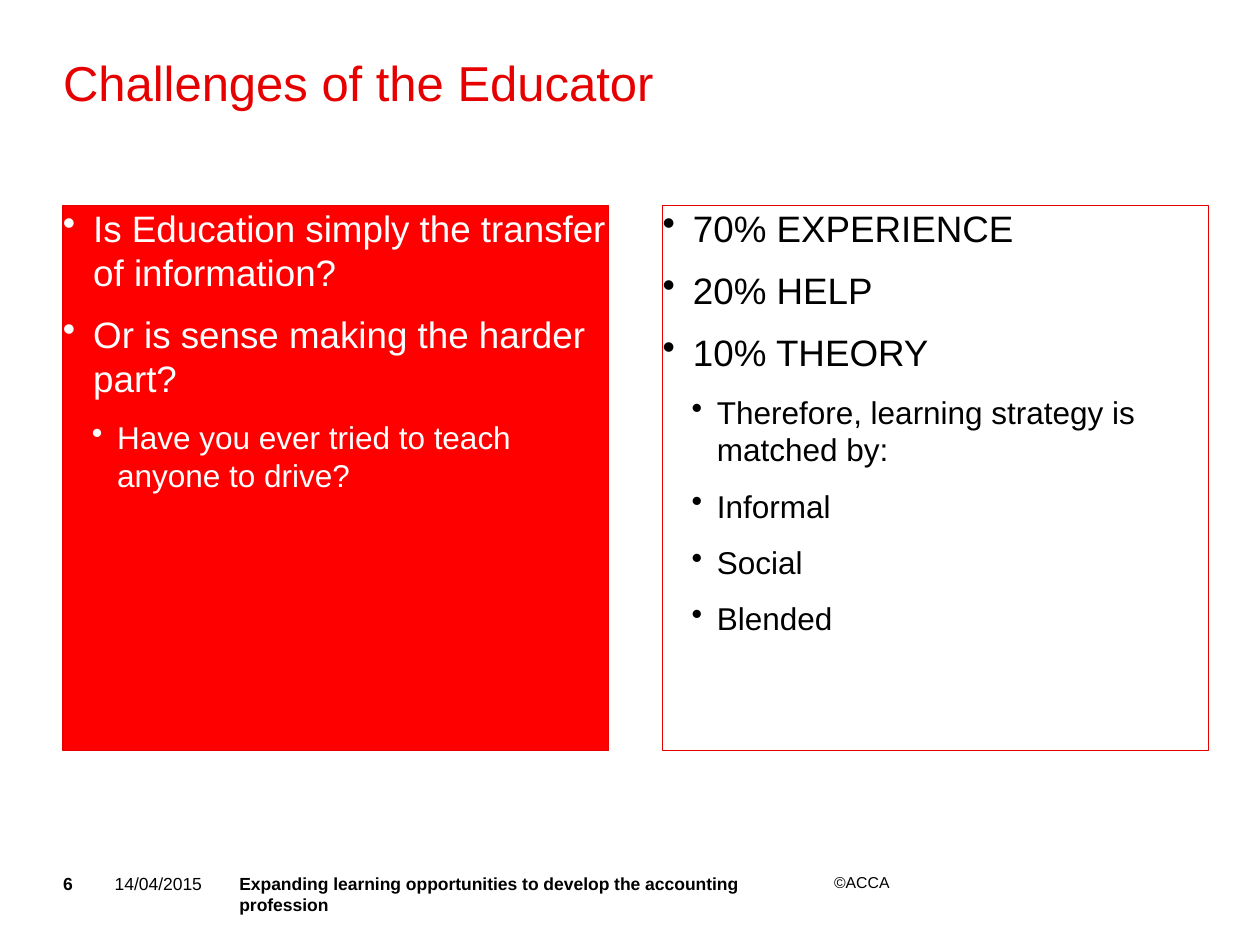
from dataclasses import dataclass

from lxml import etree
from pptx import Presentation
from pptx import util as u
from pptx.dml.color import RGBColor
from pptx.enum import shapes, text
from pptx.oxml.ns import qn


@dataclass(frozen=True)
class Theme:
    font: str = "Arial"
    red: RGBColor = RGBColor(0xE6, 0x00, 0x00)
    panel_red: RGBColor = RGBColor(0xFF, 0x00, 0x00)
    black: RGBColor = RGBColor(0x00, 0x00, 0x00)
    white: RGBColor = RGBColor(0xFF, 0xFF, 0xFF)
    title_size: float = 28
    level_sizes: tuple = (21, 18)
    level_indents: tuple = ((0.24, 0.24), (0.43, 0.20))
    bullet_gap: float = 10.5
    footer_size: float = 10
    copyright_size: float = 9


class SlideBuilder:
    def __init__(self, page, theme):
        self.page = page
        self.theme = theme

    def style(self, para, size, color, bold=False):
        para.alignment = text.PP_ALIGN.LEFT
        para.font.name = self.theme.font
        para.font.size = u.Pt(size)
        para.font.color.rgb = color
        para.font.bold = bold

    def prepare(self, frame):
        frame.word_wrap = True
        frame.vertical_anchor = text.MSO_ANCHOR.TOP
        frame.margin_left = frame.margin_right = 0
        frame.margin_top = frame.margin_bottom = 0

    def label(self, words, place, size, color, bold=False, line_spacing=None):
        box = self.page.shapes.add_textbox(*map(u.Inches, place))
        self.prepare(box.text_frame)
        para = box.text_frame.paragraphs[0]
        para.text = words
        para.line_spacing = line_spacing
        self.style(para, size, color, bold)

    def bullet(self, para, words, level, color):
        para.text = words
        para.level = level
        margin, hanging = self.theme.level_indents[level]
        properties = para._p.get_or_add_pPr()
        properties.set("marL", str(u.Inches(margin)))
        properties.set("indent", str(-u.Inches(hanging)))
        para.space_after = u.Pt(self.theme.bullet_gap)
        etree.SubElement(properties, qn("a:buChar")).set("char", "•")
        self.style(para, self.theme.level_sizes[level], color)

    def panel(self, place, items, color, fill=None):
        box = self.page.shapes.add_shape(
            shapes.MSO_SHAPE.RECTANGLE, *map(u.Inches, place))
        box.shadow.inherit = False
        if fill is None:
            box.fill.background()
        else:
            box.fill.solid()
            box.fill.fore_color.rgb = fill
        box.line.color.rgb = self.theme.red
        box.line.width = u.Pt(0.75)
        frame = box.text_frame
        self.prepare(frame)
        for index, (level, words) in enumerate(items):
            para = frame.add_paragraph() if index else frame.paragraphs[0]
            self.bullet(para, words, level, color)


def main():
    deck = Presentation()
    deck.slide_width, deck.slide_height = u.Inches(10), u.Inches(7.5)
    theme = Theme()
    builder = SlideBuilder(deck.slides.add_slide(deck.slide_layouts[6]), theme)

    builder.label("Challenges of the Educator", (0.5, 0.45, 9.09, 1.06),
                  theme.title_size, theme.red, line_spacing=0.95)

    panel_top, panel_side = 1.63, 4.33
    questions = [
        (0, "Is Education simply the transfer of information?"),
        (0, "Or is sense making the harder part?"),
        (1, "Have you ever tried to teach anyone to drive?"),
    ]
    learning_mix = [
        (0, "70% EXPERIENCE"),
        (0, "20% HELP"),
        (0, "10% THEORY"),
        (1, "Therefore, learning strategy is matched by:"),
        (1, "Informal"),
        (1, "Social"),
        (1, "Blended"),
    ]
    builder.panel((0.5, panel_top, panel_side, panel_side),
                  questions, theme.white, theme.panel_red)
    builder.panel((5.26, panel_top, panel_side, panel_side),
                  learning_mix, theme.black)

    footer_top, footer_height = 6.93, 0.24
    footers = [
        ("6", 0.5, 0.39, theme.footer_size, True),
        ("14/04/2015", 0.91, 0.75, theme.footer_size, False),
        ("Expanding learning opportunities to develop the accounting profession",
         1.9, 4.33, theme.footer_size, True),
        ("©ACCA", 6.62, 0.75, theme.copyright_size, False),
    ]
    for words, left, width, size, bold in footers:
        builder.label(words, (left, footer_top, width, footer_height),
                      size, theme.black, bold)

    deck.save("out.pptx")


if __name__ == "__main__":
    main()
